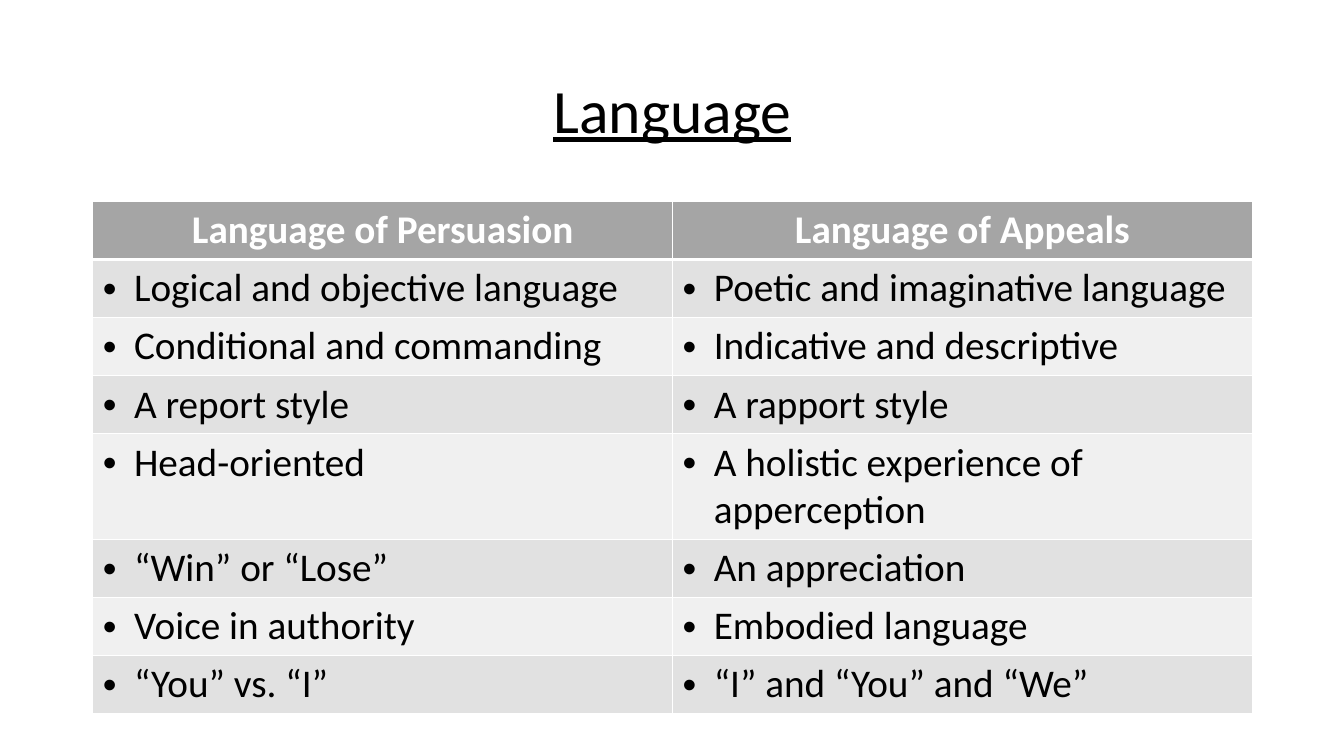
from lxml import etree
from pptx import Presentation
from pptx.dml.color import RGBColor
from pptx.enum import text
from pptx.oxml.ns import qn
from pptx.util import Inches, Pt

WHITE, BLACK = "FFFFFF", "000000"
HEADER_FILL, BAND_FILLS = "A5A5A5", ["F0F0F0", "E1E1E1"]
ROWS = [
    ("Language of Persuasion", "Language of Appeals"),
    ("Logical and objective language", "Poetic and imaginative language"),
    ("Conditional and commanding", "Indicative and descriptive"),
    ("A report style", "A rapport style"),
    ("Head-oriented", "A holistic experience of apperception"),
    ("“Win” or “Lose”", "An appreciation"),
    ("Voice in authority", "Embodied language"),
    ("“You” vs. “I”", "“I” and “You” and “We”"),
]


def add_run(paragraph, words, size, color):
    run = paragraph.add_run()
    run.text = words
    run.font.name = "Calibri"
    run.font.size = Pt(size)
    run.font.color.rgb = RGBColor.from_string(color)
    return run


def add_border(cell, side, width):
    line = etree.SubElement(cell._tc.get_or_add_tcPr(), qn(f"a:ln{side}"), w=str(Pt(width)))
    fill = etree.SubElement(line, qn("a:solidFill"))
    etree.SubElement(fill, qn("a:srgbClr"), val=WHITE)


prs = Presentation()
prs.slide_width, prs.slide_height = Inches(13.33), Inches(7.5)
slide = prs.slides.add_slide(prs.slide_layouts[5])

title = slide.shapes.title
title.left, title.top = Inches(0.92), Inches(0.4)
title.width, title.height = Inches(11.5), Inches(1.45)
title.text_frame.vertical_anchor = text.MSO_ANCHOR.MIDDLE
heading = title.text_frame.paragraphs[0]
heading.alignment = text.PP_ALIGN.CENTER
heading.line_spacing = 0.9
add_run(heading, "Language", 44, BLACK).font.underline = True

comparison = slide.shapes.add_table(
    len(ROWS), 2, Inches(0.92), Inches(2), Inches(11.5), Inches(0.41 * len(ROWS))
).table

for r, entries in enumerate(ROWS):
    is_header = r == 0
    for c, words in enumerate(entries):
        cell = comparison.cell(r, c)
        for side in "LRTB":
            below_header = (is_header and side == "B") or (r == 1 and side == "T")
            add_border(cell, side, 3 if below_header else 1)
        cell.fill.solid()
        cell.fill.fore_color.rgb = RGBColor.from_string(HEADER_FILL if is_header else BAND_FILLS[r % 2])

        entry = cell.text_frame.paragraphs[0]
        add_run(entry, words, 28, WHITE if is_header else BLACK).font.bold = is_header
        if is_header:
            entry.alignment = text.PP_ALIGN.CENTER
        else:
            props = entry._p.get_or_add_pPr()
            props.set("marL", str(Inches(0.31)))
            props.set("indent", str(-Inches(0.31)))
            etree.SubElement(props, qn("a:buFont"), typeface="Arial")
            etree.SubElement(props, qn("a:buChar"), char="•")

prs.save("out.pptx")
